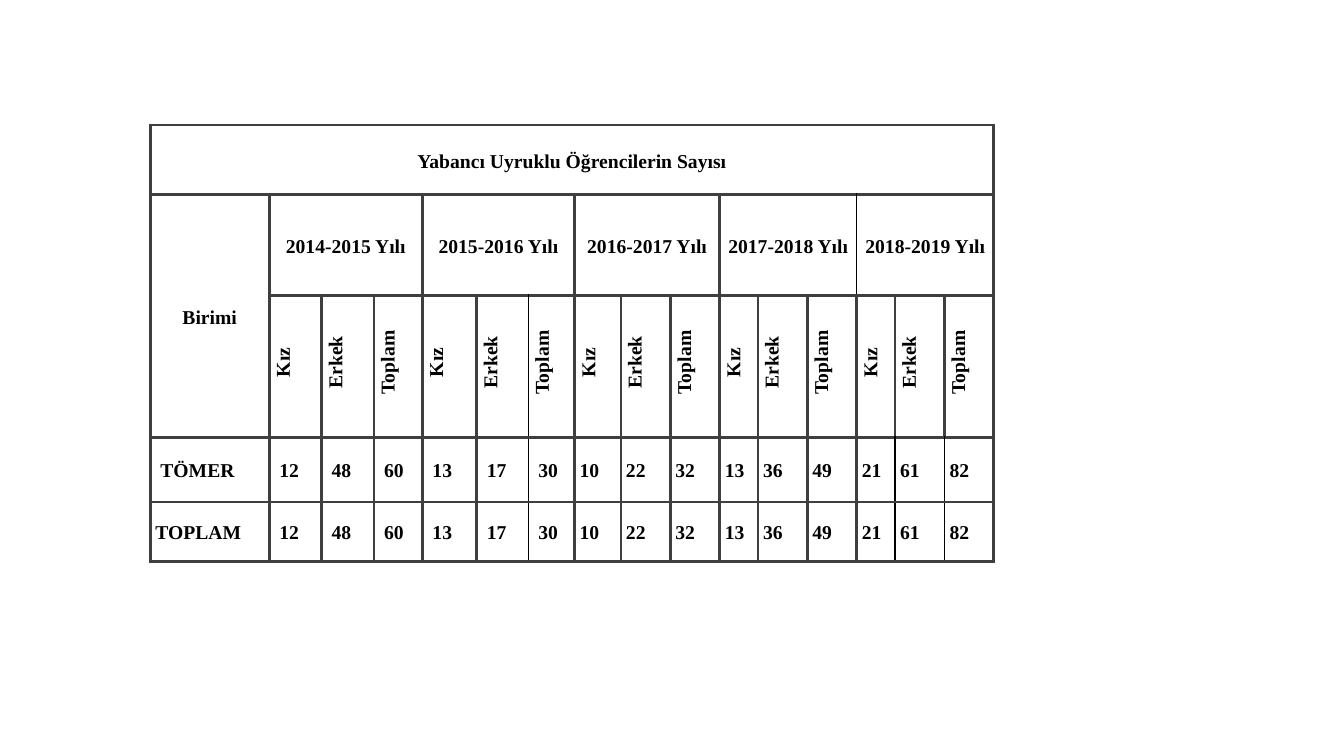
import pptx
import pptx.dml.color
import pptx.enum.text
import pptx.oxml
import pptx.oxml.ns
import pptx.util

BLACK = pptx.dml.color.RGBColor(0x00, 0x00, 0x00)
GREY = pptx.dml.color.RGBColor(0x3F, 0x3F, 0x3F)
WHITE = pptx.dml.color.RGBColor(0xFF, 0xFF, 0xFF)

CENTER = pptx.enum.text.PP_ALIGN.CENTER
LEFT = pptx.enum.text.PP_ALIGN.LEFT

COLUMN_WIDTHS = [118, 52, 52, 48, 54, 51, 46, 46, 49, 49, 38, 49, 49, 38, 49, 49]
ROW_HEIGHTS = [69, 100, 141, 64, 59]
YEARS = ["2014-2015", "2015-2016", "2016-2017", "2017-2018", "2018-2019"]
GROUPS = ["Kız", "Erkek", "Toplam"]
COUNTS = [12, 48, 60, 13, 17, 30, 10, 22, 32, 13, 36, 49, 21, 61, 82]
# (row, column) of the cells whose left edge is a thin black line
THIN_EDGES = {(1, 13), (2, 6), (3, 6), (4, 6), (3, 14), (4, 14), (3, 15), (4, 15)}


def px(count):
    """Turn px, 100 to the inch, into EMU."""
    return pptx.util.Emu(count * 9144)


class TableSlide:
    font_name = "Times New Roman"
    font_size = pptx.util.Pt(14)
    margin = 5

    def __init__(self, deck):
        self.slide = deck.slides.add_slide(deck.slide_layouts[6])
        self.table = None

    def add_table(self, left, top, widths, heights):
        frame = self.slide.shapes.add_table(
            len(heights), len(widths), px(left), px(top), px(sum(widths)), px(sum(heights)))
        self.table = frame.table
        self.table.first_row = False
        self.table.horz_banding = False
        for column, width in zip(self.table.columns, widths):
            column.width = px(width)
        for row, height in zip(self.table.rows, heights):
            row.height = px(height)

    def add_border(self, cell, side, thin):
        color, width = (BLACK, 1) if thin else (GREY, 2.25)
        cell._tc.get_or_add_tcPr().append(pptx.oxml.parse_xml(
            f'<a:ln{side} {pptx.oxml.ns.nsdecls("a")} w="{pptx.util.Pt(width)}">'
            f'<a:solidFill><a:srgbClr val="{color}"/></a:solidFill></a:ln{side}>'))

    def fill_cell(self, row, column, text, rows=1, columns=1, align=CENTER,
                  indent=0, upright=False):
        """Write one cell that spans rows by columns; upright text reads upwards."""
        origin = self.table.cell(row, column)
        if rows * columns > 1:
            origin.merge(self.table.cell(row + rows - 1, column + columns - 1))
        thin_sides = {"L": (row, column) in THIN_EDGES,
                      "R": (row, column + columns) in THIN_EDGES,
                      "T": False, "B": False}
        for covered_row in range(row, row + rows):
            for covered_column in range(column, column + columns):
                cell = self.table.cell(covered_row, covered_column)
                for side, thin in thin_sides.items():
                    self.add_border(cell, side, thin)
                cell.fill.solid()
                cell.fill.fore_color.rgb = WHITE
        origin.vertical_anchor = pptx.enum.text.MSO_ANCHOR.MIDDLE
        origin.margin_left = origin.margin_right = px(self.margin)
        origin.margin_top = origin.margin_bottom = 0
        if upright:
            origin._tc.get_or_add_tcPr().set("vert", "vert270")
        para = origin.text_frame.paragraphs[0]
        para.alignment = align
        para.line_spacing = 1.15
        if indent:
            properties = para._p.get_or_add_pPr()
            properties.set("marL", str(px(indent)))
            properties.set("indent", "0")
        span = para.add_run()
        span.text = text
        span.font.name = self.font_name
        span.font.size = self.font_size
        span.font.bold = True
        span.font.color.rgb = BLACK


def main():
    deck = pptx.Presentation()
    deck.slide_width, deck.slide_height = px(1333), px(750)
    page = TableSlide(deck)
    page.add_table(149, 124, COLUMN_WIDTHS, ROW_HEIGHTS)

    page.fill_cell(0, 0, "Yabancı Uyruklu Öğrencilerin Sayısı", columns=len(COLUMN_WIDTHS))
    page.fill_cell(1, 0, "Birimi", rows=2)
    for index, year in enumerate(YEARS):
        first = 1 + index * len(GROUPS)
        page.fill_cell(1, first, f"{year} Yılı", columns=len(GROUPS))
        for column, group in enumerate(GROUPS, first):
            page.fill_cell(2, column, group, indent=8, upright=True)

    for row, (unit, unit_indent) in enumerate([("TÖMER", 5), ("TOPLAM", 0)], 3):
        page.fill_cell(row, 0, unit, align=LEFT, indent=unit_indent)
        for column, count in enumerate(COUNTS, 1):
            count_indent = 5 if column <= 6 else 0
            page.fill_cell(row, column, str(count), align=LEFT, indent=count_indent)

    deck.save("out.pptx")


if __name__ == "__main__":
    main()
